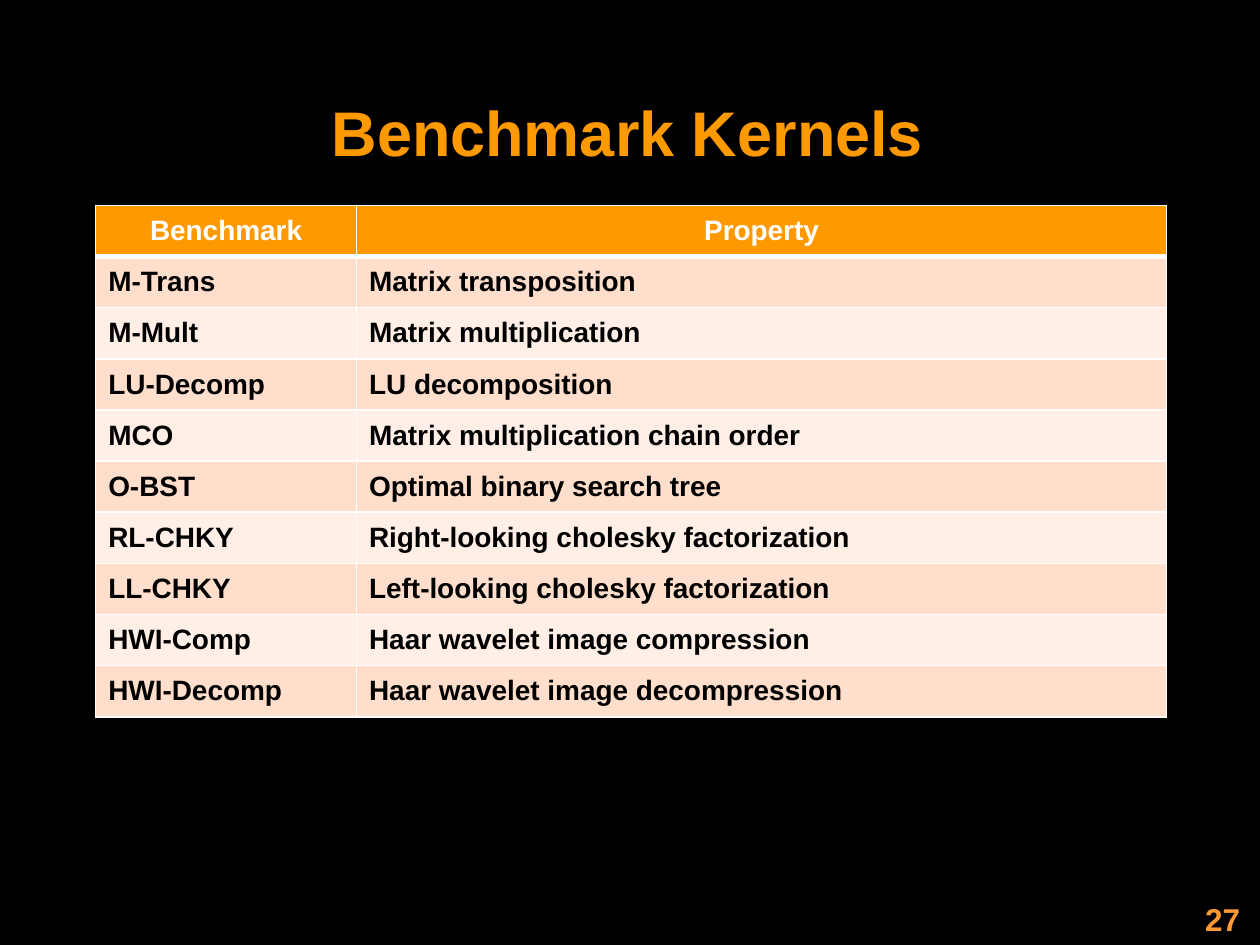
from lxml import etree
from pptx import Presentation
from pptx import util as u
from pptx.dml import color
from pptx.enum import text
from pptx.oxml import ns

ORANGE, WHITE, BLACK = "FF9900", "FFFFFF", "000000"
BANDS = ("FFDECC", "FFEFE7")
HEADER = ("Benchmark", "Property")
KERNELS = [
    ("M-Trans", "Matrix transposition"),
    ("M-Mult", "Matrix multiplication"),
    ("LU-Decomp", "LU decomposition"),
    ("MCO", "Matrix multiplication chain order"),
    ("O-BST", "Optimal binary search tree"),
    ("RL-CHKY", "Right-looking cholesky factorization"),
    ("LL-CHKY", "Left-looking cholesky factorization"),
    ("HWI-Comp", "Haar wavelet image compression"),
    ("HWI-Decomp", "Haar wavelet image decompression"),
]


def rgb(value):
    return color.RGBColor.from_string(value)


class Deck:
    """Holds the style and the current slide, and adds each kind of element."""

    font = "Arial"

    def __init__(self, width, height):
        self.prs = Presentation()
        self.prs.slide_width = u.Inches(width)
        self.prs.slide_height = u.Inches(height)

    def slide(self, background):
        self.s = self.prs.slides.add_slide(self.prs.slide_layouts[5])
        fill = self.s.background.fill
        fill.solid()
        fill.fore_color.rgb = rgb(background)

    def set_text(self, tf, words, size, ink, align):
        tf.text = words
        p = tf.paragraphs[0]
        p.alignment = align
        f = p.runs[0].font
        f.name, f.size, f.bold = self.font, u.Pt(size), True
        f.color.rgb = rgb(ink)

    def title(self, words, left, top, width, height):
        sp = self.s.shapes.title
        sp.left, sp.top = u.Inches(left), u.Inches(top)
        sp.width, sp.height = u.Inches(width), u.Inches(height)
        sp.text_frame.vertical_anchor = text.MSO_ANCHOR.MIDDLE
        self.set_text(sp.text_frame, words, 36, ORANGE, text.PP_ALIGN.CENTER)

    def label(self, words, left, top, width, height, size, ink):
        box = map(u.Inches, (left, top, width, height))
        tf = self.s.shapes.add_textbox(*box).text_frame
        tf.word_wrap = True
        self.set_text(tf, words, size, ink, text.PP_ALIGN.RIGHT)

    def borders(self, cell, top, bottom):
        tc_pr = cell._tc.get_or_add_tcPr()
        widths = {"lnL": 1, "lnR": 1, "lnT": top, "lnB": bottom}
        for i, (side, width) in enumerate(widths.items()):
            ln = etree.Element(ns.qn("a:" + side), w=str(u.Pt(width)))
            fill = etree.SubElement(ln, ns.qn("a:solidFill"))
            etree.SubElement(fill, ns.qn("a:srgbClr"), val=WHITE)
            tc_pr.insert(i, ln)

    def cell(self, cell, words, fill, ink, align):
        cell.vertical_anchor = text.MSO_ANCHOR.MIDDLE
        cell.fill.solid()
        cell.fill.fore_color.rgb = rgb(fill)
        self.set_text(cell.text_frame, words, 16, ink, align)

    def table(self, header, rows, left, top, widths, height):
        lines = [header, *rows]
        box = map(u.Inches, (left, top, sum(widths), height))
        table = self.s.shapes.add_table(len(lines), len(header), *box).table
        for column, width in zip(table.columns, widths):
            column.width = u.Inches(width)
        for i, line in enumerate(lines):
            if i == 0:
                look = ORANGE, WHITE, text.PP_ALIGN.CENTER
            else:
                look = BANDS[(i - 1) % 2], BLACK, text.PP_ALIGN.LEFT
            for j, words in enumerate(line):
                cell = table.cell(i, j)
                self.cell(cell, words, *look)
                self.borders(cell, 3 if i == 1 else 1, 3 if i == 0 else 1)


def main():
    deck = Deck(10, 7.5)
    deck.slide(BLACK)
    deck.title("Benchmark Kernels", 0.73, 0.58, 8.5, 0.93)
    deck.table(HEADER, KERNELS, 0.76, 1.63, (2.07, 6.43), 4.06)
    deck.label("27", 7.86, 7.09, 2.08, 0.5, 18, "FF9933")
    deck.prs.save("out.pptx")


if __name__ == "__main__":
    main()
